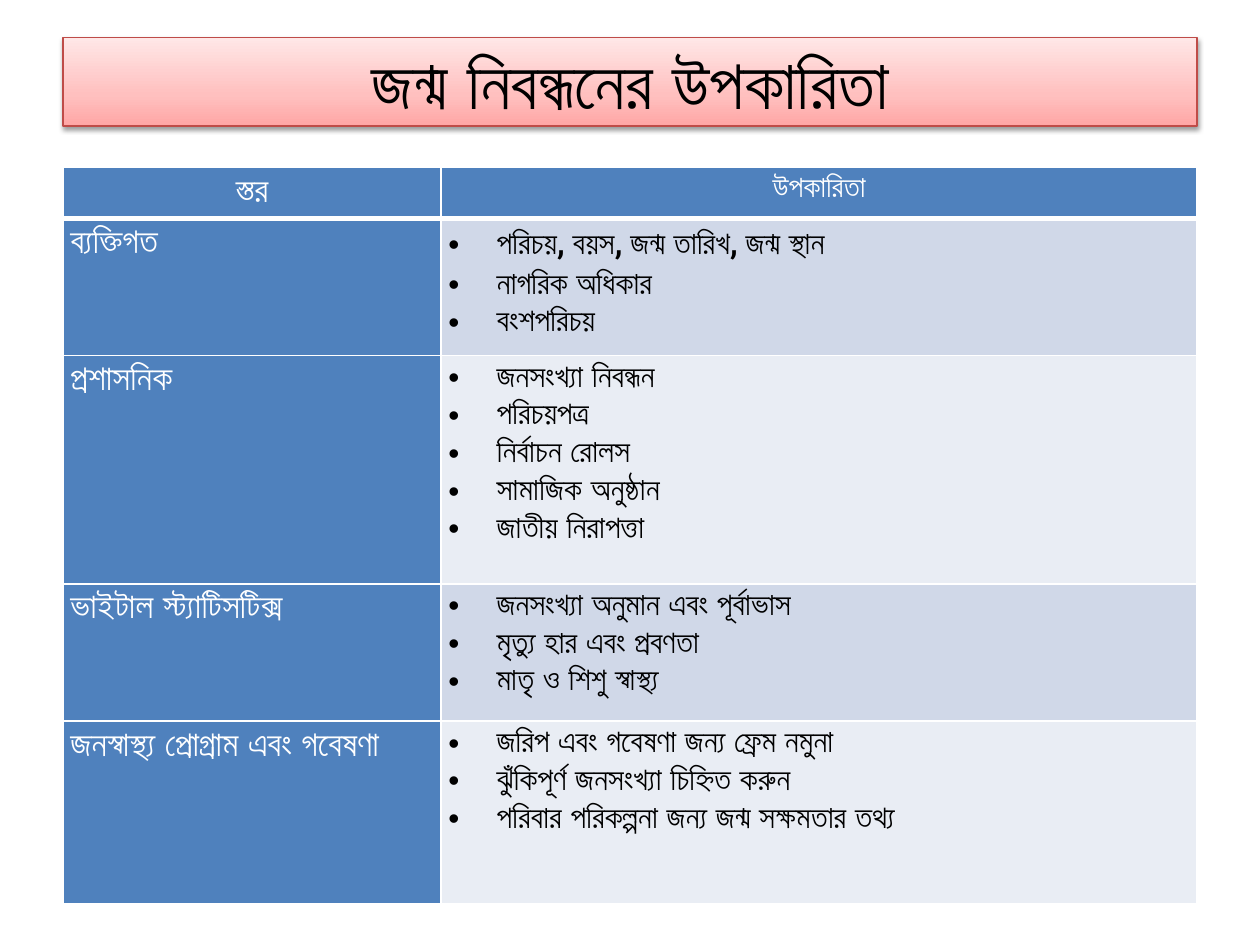
from lxml import etree
from pptx import Presentation
from pptx.dml.color import RGBColor
from pptx.enum import text
from pptx.oxml import ns
from pptx.util import Cm, Pt

TITLE = "জন্ম নিবন্ধনের উপকারিতা"
HEADINGS = ("স্তর", "উপকারিতা")
BENEFITS = [
    ("ব্যক্তিগত",
     ["পরিচয়, বয়স, জন্ম তারিখ, জন্ম স্থান", "নাগরিক অধিকার", "বংশপরিচয়"]),
    ("প্রশাসনিক",
     ["জনসংখ্যা নিবন্ধন", "পরিচয়পত্র", "নির্বাচন রোলস", "সামাজিক অনুষ্ঠান",
      "জাতীয় নিরাপত্তা"]),
    ("ভাইটাল স্ট্যাটিসটিক্স",
     ["জনসংখ্যা অনুমান এবং পূর্বাভাস", "মৃত্যু হার এবং প্রবণতা",
      "মাতৃ ও শিশু স্বাস্থ্য"]),
    ("জনস্বাস্থ্য প্রোগ্রাম এবং গবেষণা",
     ["জরিপ এবং গবেষণা জন্য ফ্রেম নমুনা", "ঝুঁকিপূর্ণ জনসংখ্যা চিহ্নিত করুন",
      "পরিবার পরিকল্পনা জন্য জন্ম সক্ষমতার তথ্য"]),
]

THEME = {
    "font": "Roboto",
    "title_size": 39.6, "level_size": 20, "heading_size": 17, "item_size": 18,
    "ink": "000000", "light": "FFFFFF", "header": "4F81BD",
    "bands": ("D0D8E8", "E9EDF4"),
    "title_line": "BF4C48",
    "title_stops": ((0, "FFA6A5"), (35, "FFC0BF"), (100, "FFE7E7")),
}
LEFT, WIDTH = Cm(1.27), Cm(22.86)
COLUMN_WIDTHS = (Cm(7.62), Cm(15.24))
ROW_HEIGHTS = (Cm(1.02), Cm(2.77), Cm(4.6), Cm(2.77), Cm(3.68))
BULLET_INDENT = Cm(0.97)


def add_xml(parent, markup):
    """Append markup whose root tag has the a: prefix."""
    tag, rest = markup[1:].split(" ", 1)
    parent.append(etree.fromstring(f'<{tag} {ns.nsdecls("a")} {rest}'))


def style_runs(para, size, color):
    for span in para.runs:
        span.font.name = THEME["font"]
        span.font.size = Pt(size)
        span.font.bold = True
        span.font.color.rgb = RGBColor.from_string(color)


def add_bullet(para):
    props = para._p.get_or_add_pPr()
    props.set("marL", str(BULLET_INDENT))
    props.set("indent", str(-BULLET_INDENT))
    add_xml(props, '<a:buFont typeface="Arial"/>')
    add_xml(props, '<a:buChar char="•"/>')


def add_borders(cell, bottom):
    for side, width in (("L", 1), ("R", 1), ("T", 1), ("B", bottom)):
        add_xml(cell._tc.get_or_add_tcPr(),
                f'<a:ln{side} w="{Pt(width)}"><a:solidFill>'
                f'<a:srgbClr val="{THEME["light"]}"/></a:solidFill></a:ln{side}>')


def fill_cell(cell, lines, size, color, fill, align=None, bullets=False, bottom=1):
    add_borders(cell, bottom)
    cell.fill.solid()
    cell.fill.fore_color.rgb = RGBColor.from_string(fill)
    cell.margin_left = cell.margin_right = Cm(0.15)
    cell.margin_top = cell.margin_bottom = 0
    cell.text_frame.text = "\n".join(lines)
    for para in cell.text_frame.paragraphs:
        para.alignment = align
        para.line_spacing = 1.2
        if bullets:
            add_bullet(para)
        style_runs(para, size, color)


def add_title(page):
    box = page.shapes.title
    box.left, box.top, box.width, box.height = LEFT, Cm(0.76), WIDTH, Cm(1.78)
    stops = "".join(f'<a:gs pos="{place * 1000}"><a:srgbClr val="{color}"/></a:gs>'
                    for place, color in THEME["title_stops"])
    props = box._element.spPr
    add_xml(props, f'<a:gradFill rotWithShape="1"><a:gsLst>{stops}</a:gsLst>'
                   '<a:lin ang="16200000" scaled="1"/></a:gradFill>')
    box.line.color.rgb = RGBColor.from_string(THEME["title_line"])
    box.line.width = Pt(0.75)
    add_xml(props, '<a:effectLst ><a:outerShdw '
                   f'blurRad="{Pt(3.1)}" dist="{Pt(1.6)}" dir="5400000" rotWithShape="0">'
                   '<a:srgbClr val="000000"><a:alpha val="38000"/></a:srgbClr>'
                   '</a:outerShdw></a:effectLst>')
    frame = box.text_frame
    frame.text = TITLE
    frame.auto_size = text.MSO_AUTO_SIZE.NONE
    frame.vertical_anchor = text.MSO_ANCHOR.MIDDLE
    frame.paragraphs[0].alignment = text.PP_ALIGN.CENTER
    style_runs(frame.paragraphs[0], THEME["title_size"], THEME["ink"])


def add_benefits_table(page):
    table = page.shapes.add_table(len(ROW_HEIGHTS), len(COLUMN_WIDTHS), LEFT, Cm(3.38),
                                  WIDTH, sum(ROW_HEIGHTS)).table
    for column, width in zip(table.columns, COLUMN_WIDTHS):
        column.width = width
    for row, height in zip(table.rows, ROW_HEIGHTS):
        row.height = height

    heading_sizes = (THEME["level_size"], THEME["heading_size"])
    for index, (heading, size) in enumerate(zip(HEADINGS, heading_sizes)):
        fill_cell(table.cell(0, index), [heading], size, THEME["light"],
                  THEME["header"], text.PP_ALIGN.CENTER, bottom=3)
    for index, (level, items) in enumerate(BENEFITS):
        fill_cell(table.cell(index + 1, 0), [level], THEME["level_size"],
                  THEME["light"], THEME["header"])
        fill_cell(table.cell(index + 1, 1), items, THEME["item_size"],
                  THEME["ink"], THEME["bands"][index % 2], bullets=True)


def main():
    deck = Presentation()
    deck.slide_width, deck.slide_height = Cm(25.4), Cm(19.05)
    page = deck.slides.add_slide(deck.slide_layouts[5])
    add_title(page)
    add_benefits_table(page)
    deck.save("out.pptx")


if __name__ == "__main__":
    main()
